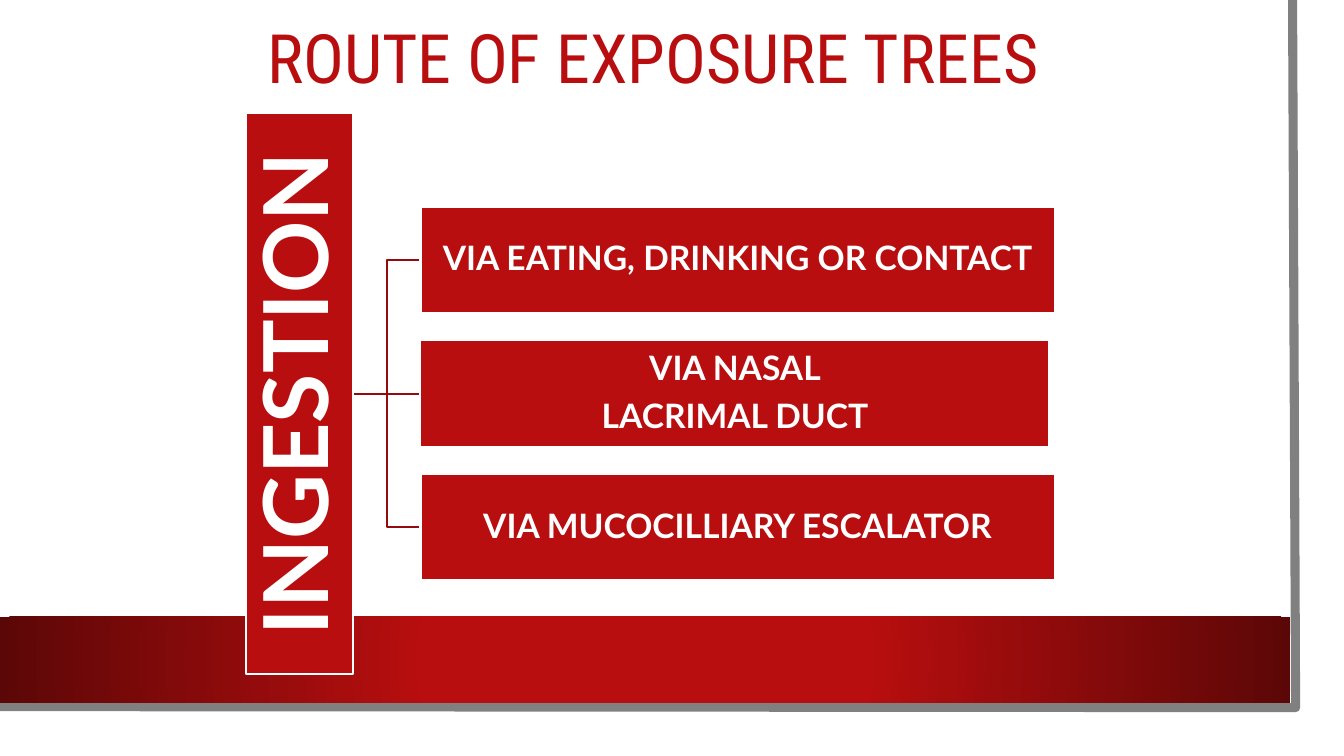
from lxml import etree
from pptx import Presentation
from pptx.dml.color import RGBColor
from pptx.enum.shapes import MSO_CONNECTOR, MSO_SHAPE
from pptx.enum.text import MSO_ANCHOR, MSO_AUTO_SIZE, PP_ALIGN
from pptx.oxml.ns import qn
from pptx.util import Inches, Pt

RECTANGLE = MSO_SHAPE.RECTANGLE
ELBOW, STRAIGHT = MSO_CONNECTOR.ELBOW, MSO_CONNECTOR.STRAIGHT
CENTER, MIDDLE = PP_ALIGN.CENTER, MSO_ANCHOR.MIDDLE

RED = RGBColor(0xB8, 0x0E, 0x0F)
DARK_RED = RGBColor(0x5C, 0x07, 0x07)
LINK_RED = RGBColor(0x93, 0x0B, 0x0C)
GRAY = RGBColor(0x80, 0x80, 0x80)
WHITE = RGBColor(0xFF, 0xFF, 0xFF)

WIDTH, HEIGHT = 13.33, 7.5
TITLE_BOX = (0.79, 0.31, 11.37, 0.6)
TREE_BOX = (2.44, 1.12, 8.02, 5.57)
NODE_HEIGHT, LINK_WIDTH, ROW_PITCH = 1.06, 0.67, 1.325

ROOT = "INGESTION"
# Lines of each branch and its width
BRANCHES = [
    (["VIA EATING, DRINKING OR CONTACT"], 6.29),
    (["VIA NASAL", "LACRIMAL DUCT"], 6.24),
    (["VIA MUCOCILLIARY ESCALATOR"], 6.29),
]


def write_text(frame, lines, size, font="Lato", color=WHITE, bold=True,
               inset=0.02, space_after=0):
    """Fill a text frame with centred lines of one format."""
    frame.word_wrap = True
    frame.auto_size = MSO_AUTO_SIZE.NONE
    frame.vertical_anchor = MIDDLE
    frame.margin_left = frame.margin_right = Inches(inset)
    frame.margin_top = frame.margin_bottom = Inches(inset)
    for index, line in enumerate(lines):
        para = frame.add_paragraph() if index else frame.paragraphs[0]
        para.alignment = CENTER
        para.line_spacing = 0.9
        para.space_before = Pt(0)
        para.space_after = Pt(space_after)
        span = para.add_run()
        span.text = line
        span.font.name = font
        span.font.size = Pt(size)
        span.font.bold = bold
        span.font.color.rgb = color


def add_box(page, left, top, width, height, fill=RED, line=None):
    box = page.shapes.add_shape(RECTANGLE, Inches(left), Inches(top),
                                Inches(width), Inches(height))
    box.shadow.inherit = False
    box.fill.solid()
    box.fill.fore_color.rgb = fill
    if line is None:
        box.line.fill.background()
    else:
        box.line.color.rgb = line
        box.line.width = Pt(1.5)
    return box


def add_link(page, kind, start, end):
    link = page.shapes.add_connector(kind, *map(Inches, start + end))
    link.line.color.rgb = LINK_RED
    link.line.width = Pt(1.5)
    etree.SubElement(link._element.spPr, qn("a:effectLst"))


def add_backdrop(page):
    """White sheet, gray edge and red band."""
    add_box(page, 0, 0, 13.1, 7.27, fill=WHITE)

    builder = page.shapes.build_freeform(Inches(12.82), 0)
    builder.add_line_segments([(Inches(12.85), Inches(7.02)),
                               (Inches(-0.03), Inches(7.01))], close=False)
    edge = builder.convert_to_shape()
    edge.shadow.inherit = False
    edge.fill.background()
    edge.line.color.rgb = GRAY
    edge.line.width = Pt(6.5)

    band = add_box(page, 0, 6.12, 12.8, 0.85)
    band.fill.gradient()
    stops = zip(band.fill.gradient_stops, [(0.34, RED), (1, DARK_RED)])
    for stop, (position, color) in stops:
        stop.position = position
        stop.color.rgb = color
    # Radial gradient from the centre
    gradient = band._element.spPr.find(qn("a:gradFill"))
    gradient.remove(gradient.find(qn("a:lin")))
    radial = etree.SubElement(gradient, qn("a:path"), {"path": "circle"})
    etree.SubElement(radial, qn("a:fillToRect"),
                     dict.fromkeys("ltrb", "50000"))


def add_title(page, left, top, width, height):
    title = page.shapes.title
    title.left, title.top = Inches(left), Inches(top)
    title.width, title.height = Inches(width), Inches(height)
    write_text(title.text_frame, ["ROUTE OF EXPOSURE TREES"], 48.6,
               font="Roboto Condensed", color=RED, bold=False, inset=0.05)


def add_tree(page, left, top, width, height):
    """Upright root on the left, branches stacked around its middle."""
    root_right = left + NODE_HEIGHT
    branch_left = root_right + LINK_WIDTH
    middle = top + height / 2
    rows = [middle + (index - 1) * ROW_PITCH for index in range(len(BRANCHES))]

    for row in rows:
        add_link(page, STRAIGHT if row == middle else ELBOW,
                 (root_right, middle), (branch_left, row))

    # The root is a wide box turned about its centre
    root = add_box(page, left + (NODE_HEIGHT - height) / 2,
                   middle - NODE_HEIGHT / 2, height, NODE_HEIGHT, line=WHITE)
    root.rotation = 270
    write_text(root.text_frame, [ROOT], 64, inset=0.04)

    for row, (lines, branch_width) in zip(rows, BRANCHES):
        branch = add_box(page, branch_left, row - NODE_HEIGHT / 2,
                         branch_width, NODE_HEIGHT, line=WHITE)
        write_text(branch.text_frame, lines, 24, space_after=8.4)


def main():
    deck = Presentation()
    deck.slide_width, deck.slide_height = Inches(WIDTH), Inches(HEIGHT)
    page = deck.slides.add_slide(deck.slide_layouts[5])
    add_backdrop(page)
    # Bring the title in front of the backdrop
    page.shapes._spTree.append(page.shapes.title._element)
    add_title(page, *TITLE_BOX)
    add_tree(page, *TREE_BOX)
    deck.save("out.pptx")


if __name__ == "__main__":
    main()
